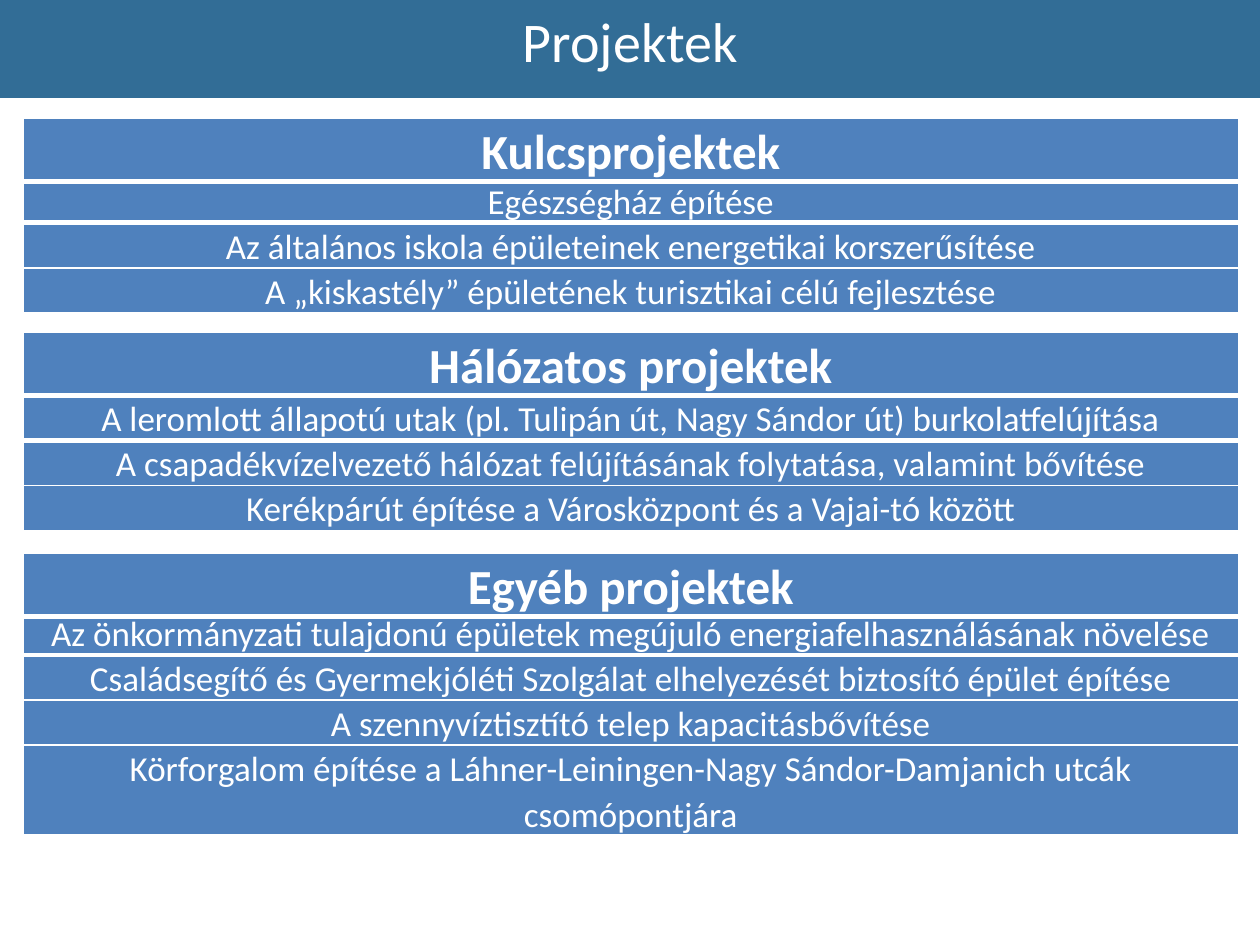
from dataclasses import dataclass

from lxml import etree
from pptx import Presentation
from pptx.dml.color import RGBColor
from pptx.enum.shapes import MSO_SHAPE
from pptx.enum.text import PP_ALIGN
from pptx.oxml.ns import qn
from pptx.slide import Slide
from pptx.util import Pt

RECTANGLE = MSO_SHAPE.RECTANGLE
CENTER = PP_ALIGN.CENTER
WHITE = RGBColor(0xFF, 0xFF, 0xFF)
BAND_BLUE = RGBColor(0x14, 0x58, 0x87)
ROW_BLUE = RGBColor(0x4F, 0x81, 0xBD)

TABLE_LEFT = 13
TABLE_WIDTH = 694.8
HEADING_HEIGHT = 34.5
ROW_HEIGHT = 24.5

SECTIONS = [
    ("Kulcsprojektek", 67.6, 101.6, [
        "Egészségház építése",
        "Az általános iskola épületeinek energetikai korszerűsítése",
        "A „kiskastély” épületének turisztikai célú fejlesztése",
    ]),
    ("Hálózatos projektek", 190, 226, [
        "A leromlott állapotú utak (pl. Tulipán út, Nagy Sándor út) burkolatfelújítása",
        "A csapadékvízelvezető hálózat felújításának folytatása, valamint bővítése",
        "Kerékpárút építése a Városközpont és a Vajai-tó között",
    ]),
    ("Egyéb projektek", 316.2, 348.5, [
        "Az önkormányzati tulajdonú épületek megújuló energiafelhasználásának növelése",
        "Családsegítő és Gyermekjóléti Szolgálat elhelyezését biztosító épület építése",
        "A szennyvíztisztító telep kapacitásbővítése",
        "Körforgalom építése a Láhner-Leiningen-Nagy Sándor-Damjanich utcák csomópontjára",
    ]),
]


@dataclass
class SlideBuilder:
    slide: Slide
    font_name: str = "Calibri"
    text_color: RGBColor = WHITE
    line_spacing: float = 1.07

    def set_text(self, paragraph, text, size, bold=False):
        paragraph.text = text
        paragraph.alignment = CENTER
        paragraph.font.name = self.font_name
        paragraph.font.size = Pt(size)
        paragraph.font.bold = bold
        paragraph.font.color.rgb = self.text_color

    def band(self, left, top, width, height, color, opacity):
        shape = self.slide.shapes.add_shape(
            RECTANGLE, Pt(left), Pt(top), Pt(width), Pt(height))
        shape.shadow.inherit = False
        shape.line.fill.background()
        shape.fill.solid()
        shape.fill.fore_color.rgb = color
        color_element = shape.element.spPr.find(".//" + qn("a:srgbClr"))
        etree.SubElement(color_element, qn("a:alpha"), val=str(opacity * 1000))

    def title(self, left, top, width, height, text):
        shape = self.slide.shapes.add_textbox(
            Pt(left), Pt(top), Pt(width), Pt(height))
        shape.text_frame.word_wrap = True
        self.set_text(shape.text_frame.paragraphs[0], text, 32)

    def border(self, cell, side, width):
        properties = cell._tc.get_or_add_tcPr()
        line = etree.SubElement(properties, qn("a:" + side), w=str(Pt(width)))
        fill = etree.SubElement(line, qn("a:solidFill"))
        etree.SubElement(fill, qn("a:srgbClr"), val=str(WHITE))

    def table(self, top, row_height, texts, size, bold=False):
        shape = self.slide.shapes.add_table(
            len(texts), 1, Pt(TABLE_LEFT), Pt(top),
            Pt(TABLE_WIDTH), Pt(row_height * len(texts)))
        table = shape.table
        table.first_row = False
        table.horz_banding = False
        for index, text in enumerate(texts):
            cell = table.cell(index, 0)
            cell.margin_left = cell.margin_right = Pt(5)
            cell.margin_top = cell.margin_bottom = Pt(0)
            self.border(cell, "lnL", 1)
            self.border(cell, "lnR", 1)
            self.border(cell, "lnT", 3 if index == 1 else 1)
            self.border(cell, "lnB", 3 if index == 0 else 1)
            cell.fill.solid()
            cell.fill.fore_color.rgb = ROW_BLUE
            paragraph = cell.text_frame.paragraphs[0]
            self.set_text(paragraph, text, size, bold)
            paragraph.line_spacing = self.line_spacing


def main():
    presentation = Presentation()
    presentation.slide_width = Pt(720)
    presentation.slide_height = Pt(540)
    slide = presentation.slides.add_slide(presentation.slide_layouts[6])
    builder = SlideBuilder(slide)
    builder.band(0, 0, 720, 56, BAND_BLUE, 87)
    builder.title(95.75, 0, 529, 46, "Projektek")
    for _, _, rows_top, projects in SECTIONS:
        builder.table(rows_top, ROW_HEIGHT, projects, 20)
    for heading, heading_top, _, _ in SECTIONS:
        builder.table(heading_top, HEADING_HEIGHT, [heading], 28, bold=True)
    presentation.save("out.pptx")


if __name__ == "__main__":
    main()
